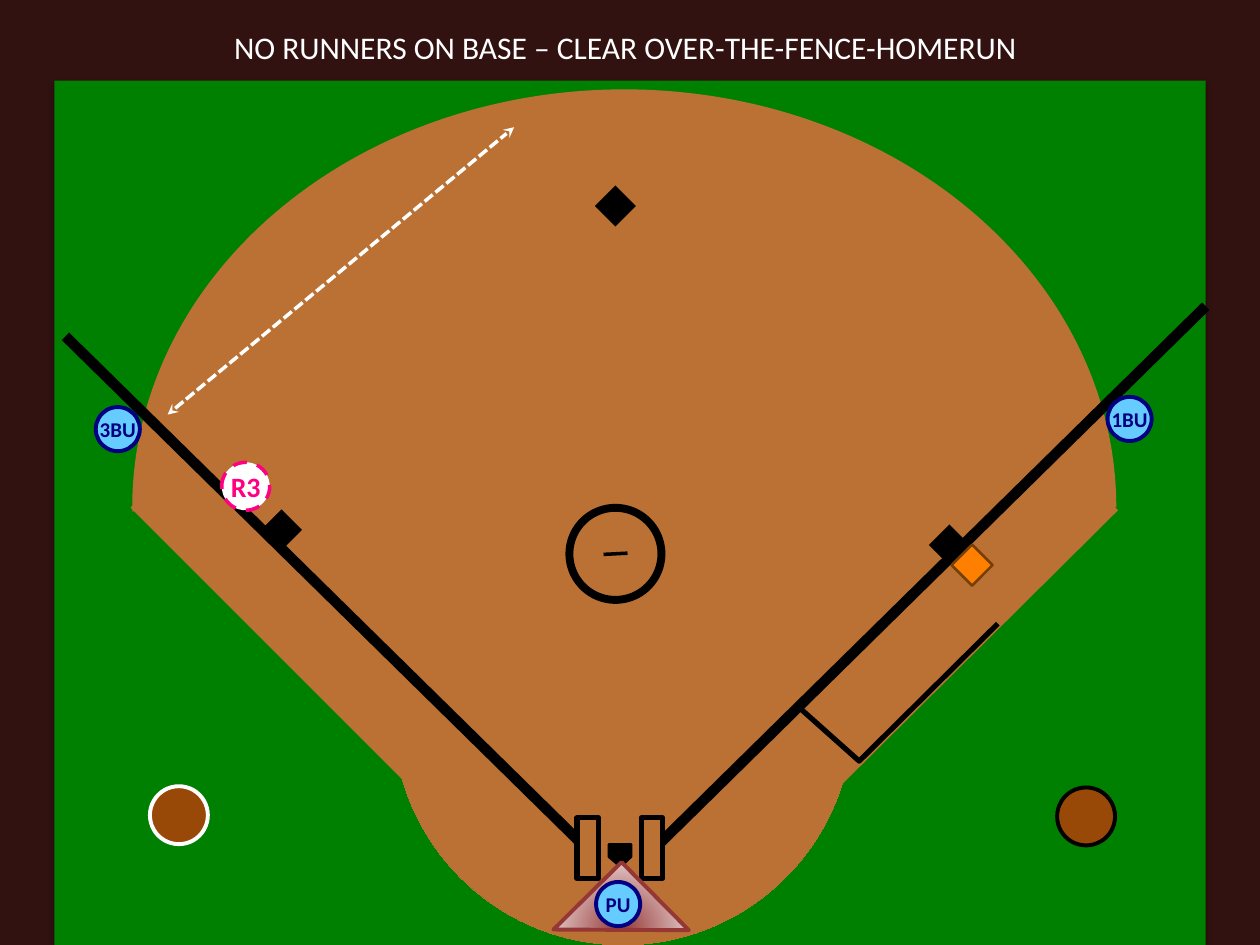
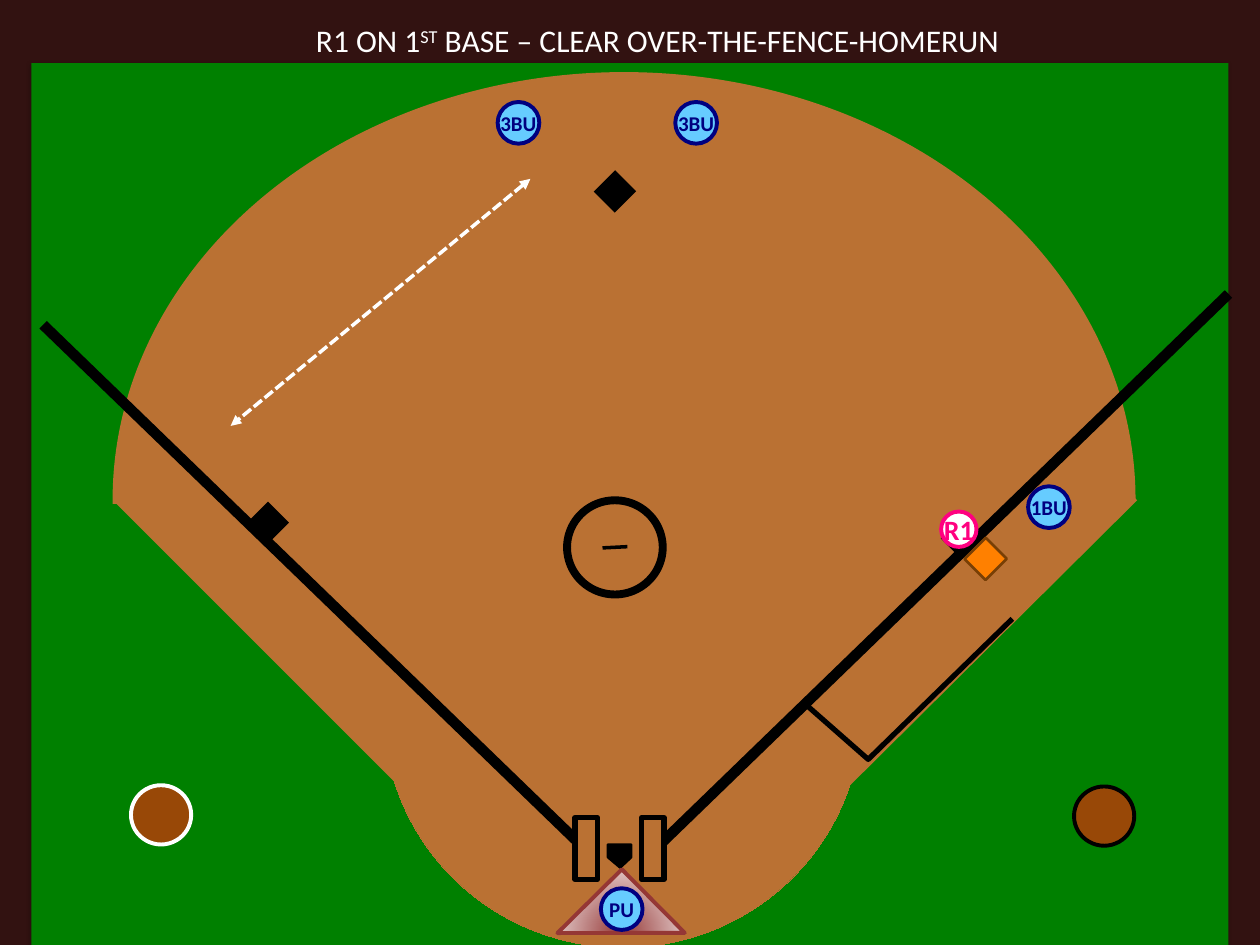
"""Build two umpire-position diagrams for an over-the-fence home run."""
from dataclasses import dataclass

from lxml import etree
from pptx import Presentation
from pptx.dml.color import RGBColor
from pptx.enum.dml import MSO_LINE
from pptx.enum.shapes import MSO_CONNECTOR, MSO_SHAPE
from pptx.enum.text import MSO_ANCHOR, MSO_AUTO_SIZE, PP_ALIGN
from pptx.oxml.ns import qn
from pptx.util import Pt

RECT, OVAL, ARC = MSO_SHAPE.RECTANGLE, MSO_SHAPE.OVAL, MSO_SHAPE.BLOCK_ARC
ROUND_ONE, WEDGE = MSO_SHAPE.ROUND_1_RECTANGLE, MSO_SHAPE.RIGHT_TRIANGLE
STRAIGHT = MSO_CONNECTOR.STRAIGHT
DASH, SHORT_DASH = MSO_LINE.DASH, MSO_LINE.SQUARE_DOT
CENTER, MIDDLE = PP_ALIGN.CENTER, MSO_ANCHOR.MIDDLE
FIT_TEXT = MSO_AUTO_SIZE.SHAPE_TO_FIT_TEXT


@dataclass(frozen=True)
class Theme:
    page: str = "321211"
    grass: str = "008000"
    dirt: str = "BA7133"
    chalk: str = "000000"
    white: str = "FFFFFF"
    on_deck: str = "984807"
    safe_base: str = "FF8000"
    safe_edge: str = "783F05"
    umpire: str = "66CCFF"
    navy: str = "000080"
    runner: str = "FF0080"
    wedge: str = "953735"
    font: str = "Calibri"
    title_size: float = 18
    umpire_size: float = 12
    runner_size: float = 16


T = Theme()
FIELD = (31, 46, 658, 494)
BASE, BATTER_BOX, ON_DECK = (16.6, 16.6), (12.2, 34.6), (33.1, 33.1)

GROUND = [
    (RECT, FIELD, 0, T.grass, None, 0),
    (OVAL, (224.6, 276.5, 262.8, 263.5), 0, T.dirt, T.dirt, 0.01),
    (ARC, (75.6, 51.1, 562.3, 477.4), 0, T.dirt, None, 0),
    (ROUND_ONE, (177.1, 105.8, 351.4, 352.1), 315, T.dirt, T.dirt, 6),
]
FOUL_LINES = [((689, 175), (375.8, 483.1)), ((37.4, 192.2), (333.4, 483.1))]
MARKINGS = [
    *[(RECT, spot + BASE, 315, T.chalk, None, 0)
      for spot in ((343.4, 109.4), (152.6, 294.5), (534.2, 303.1))],
    *[(RECT, (left, 467.3) + BATTER_BOX, 0, T.dirt, T.chalk, 3) for left in (329.8, 366.5)],
    (OVAL, (325.4, 290.2, 52.6, 52.6), 0, T.dirt, T.chalk, 4.5),
]
HOME_PLATE = [(347.8, 482.4), (360.7, 482.4), (360.7, 489.6), (354.6, 495.4), (347.8, 489.6)]
PITCHER_PLATE = ((358.6, 316.1), (344.9, 316.8))
SIDELINES = [
    (RECT, (523.4, 243.4, 36.7, 237.6), 225.2, T.dirt, None, 0),
    (OVAL, (604.1, 450) + ON_DECK, 0, T.on_deck, T.chalk, 2.25),
    (OVAL, (85.7, 449.3) + ON_DECK, 0, T.on_deck, T.white, 2.25),
    (RECT, (149.8, 247, 28.8, 224.6), 315, T.dirt, None, 0),
    (RECT, (547.2, 314.6) + BASE, 315, T.safe_base, T.safe_edge, 1.5),
]
RUNNER_LANE = [(457.9, 405.4), (491, 434.9), (570.2, 356.4)]

PLAYS = [
    dict(
        title=[("NO RUNNERS ON BASE – CLEAR OVER-THE-FENCE-HOMERUN", 0)],
        title_box=(126.7, 12.2, 476, 29),
        field=FIELD,
        wedge=(327.6, 504, 54.7, 54.7),
        umpire_width=25.2,
        umpires=[("1BU", 632.9, 226.8), ("3BU", 54.7, 232.6), ("PU", 340.6, 504)],
        runner=("R3", 126.7, 264.2, 27.4, 2, DASH),
        path_ends=((95.8, 236.9), (293.8, 72.7)),
        arrow="stealth",
    ),
    dict(
        title=[("R1 ON 1", 0), ("ST", 30), (" BASE – CLEAR OVER-THE-FENCE-HOMERUN", 0)],
        title_box=(173.5, 8.6, 415.4, 29),
        field=(18, 36, 684, 505.5),
        wedge=(329, 507.6, 51.8, 51.1),
        umpire_width=23.8,
        umpires=[("1BU", 587.5, 277.9), ("3BU", 385.9, 58.3),
                 ("3BU", 284.4, 58.3), ("PU", 343.4, 507.6)],
        runner=("R1", 537.8, 292.3, 20.2, 2.25, None),
        path_ends=((303.1, 102.2), (131.8, 243.4)),
        arrow="triangle",
    ),
]


def rgb(color):
    return RGBColor.from_string(color)


def style_line(line, color, width, dash=None):
    if color is None:
        line.fill.background()
        return
    line.color.rgb = rgb(color)
    line.width = Pt(width)
    if dash is not None:
        line.dash_style = dash


def paint(shape, fill, edge, width, dash=None):
    shape.shadow.inherit = False
    if fill is None:
        shape.fill.background()
    else:
        shape.fill.solid()
        shape.fill.fore_color.rgb = rgb(fill)
    style_line(shape.line, edge, width, dash)
    return shape


def add_part(shapes, kind, box, rotation, fill, edge, width, dash=None):
    part = shapes.add_shape(kind, *map(Pt, box))
    part.rotation = rotation
    return paint(part, fill, edge, width, dash)


def add_line(shapes, ends, color, width, dash=None, arrow=None):
    start, end = ends
    line = shapes.add_connector(STRAIGHT, *map(Pt, start + end))
    style_line(line.line, color, width, dash)
    properties = line._element.spPr
    if arrow:
        for tip in ("a:headEnd", "a:tailEnd"):
            etree.SubElement(properties.find(qn("a:ln")), qn(tip), type=arrow)
    etree.SubElement(properties, qn("a:effectLst"))


def add_outline(shapes, points, closed, fill, width):
    corners = [(Pt(x), Pt(y)) for x, y in points]
    builder = shapes.build_freeform(*corners[0], scale=1.0)
    builder.add_line_segments(corners[1:], close=closed)
    paint(builder.convert_to_shape(), fill, T.chalk, width)


def add_run(paragraph, text, size, color, bold=False, raised=0):
    run = paragraph.add_run()
    run.text = text
    run.font.name, run.font.size, run.font.bold = T.font, Pt(size), bold
    run.font.color.rgb = rgb(color)
    if raised:
        run._r.get_or_add_rPr().set("baseline", str(raised * 1000))


def add_badge(shapes, label, left, top, width, fill, color, size, edge, dash=None):
    badge = add_part(shapes, OVAL, (left, top, width, width), 0, fill, color, edge, dash)
    frame = badge.text_frame
    frame.word_wrap, frame.vertical_anchor = False, MIDDLE
    frame.paragraphs[0].alignment = CENTER
    add_run(frame.paragraphs[0], label, size, color, bold=True)


def cast_shadow(shape):
    effects = shape._element.spPr.find(qn("a:effectLst"))
    shadow = etree.SubElement(effects, qn("a:outerShdw"), blurRad=str(Pt(3.1)),
                              dist=str(Pt(1.8)), dir="5400000", rotWithShape="0")
    color = etree.SubElement(shadow, qn("a:srgbClr"), val=T.chalk)
    etree.SubElement(color, qn("a:alpha"), val="35000")


def add_field(slide, target):
    shapes = slide.shapes.add_group_shape().shapes
    scale_x, scale_y = target[2] / FIELD[2], target[3] / FIELD[3]

    def place(point):
        return (target[0] + (point[0] - FIELD[0]) * scale_x,
                target[1] + (point[1] - FIELD[1]) * scale_y)

    def fit(box, rotation):
        left, top, width, height = box
        x, y = place((left + width / 2, top + height / 2))
        sideways = 45 <= rotation % 180 < 135
        width *= scale_y if sideways else scale_x
        height *= scale_x if sideways else scale_y
        return x - width / 2, y - height / 2, width, height

    def add_parts(parts):
        return [add_part(shapes, kind, fit(box, rotation), rotation, *look)
                for kind, box, rotation, *look in parts]

    grass, _, outfield_edge, _ = add_parts(GROUND)
    cast_shadow(grass)
    for index, value in enumerate((107.699, 0, 0.25)):
        outfield_edge.adjustments[index] = value
    for ends in FOUL_LINES:
        add_line(shapes, tuple(map(place, ends)), T.chalk, 6)
    add_parts(MARKINGS)
    add_outline(shapes, map(place, HOME_PLATE), True, T.chalk, 1.25)
    add_line(shapes, tuple(map(place, PITCHER_PLATE)), T.chalk, 2)
    add_parts(SIDELINES)
    add_outline(shapes, map(place, RUNNER_LANE), False, None, 3)


def add_wedge(shapes, box):
    wedge = add_part(shapes, WEDGE, box, 135.3, T.wedge, T.wedge, 2.25)
    wedge.fill.gradient()
    for stop, color, position in zip(wedge.fill.gradient_stops, (T.wedge, T.white), (0, 1)):
        stop.color.rgb, stop.position = rgb(color), position
    gradient = wedge._element.spPr.find(qn("a:gradFill"))
    gradient.remove(gradient.find(qn("a:lin")))
    radial = etree.SubElement(gradient, qn("a:path"), attrib={"path": "circle"})
    etree.SubElement(radial, qn("a:fillToRect"), l="50000", t="50000", r="50000", b="50000")


def add_title(shapes, box, pieces):
    frame = shapes.add_textbox(*map(Pt, box)).text_frame
    frame.word_wrap, frame.auto_size = False, FIT_TEXT
    for text, raised in pieces:
        add_run(frame.paragraphs[0], text, T.title_size, T.white, raised=raised)


def add_play(deck, play):
    slide = deck.slides.add_slide(deck.slide_layouts[6])
    slide.background.fill.solid()
    slide.background.fill.fore_color.rgb = rgb(T.page)
    shapes = slide.shapes
    add_field(slide, play["field"])
    add_wedge(shapes, play["wedge"])
    for label, left, top in play["umpires"]:
        add_badge(shapes, label, left, top, play["umpire_width"],
                  T.umpire, T.navy, T.umpire_size, 2.25)
    add_line(shapes, play["path_ends"], T.white, 2, SHORT_DASH, play["arrow"])
    label, left, top, width, edge, dash = play["runner"]
    add_badge(shapes, label, left, top, width, T.white, T.runner, T.runner_size, edge, dash)
    add_title(shapes, play["title_box"], play["title"])


def main():
    deck = Presentation()
    deck.slide_width, deck.slide_height = Pt(720), Pt(540)
    for play in PLAYS:
        add_play(deck, play)
    deck.save("out.pptx")


if __name__ == "__main__":
    main()
